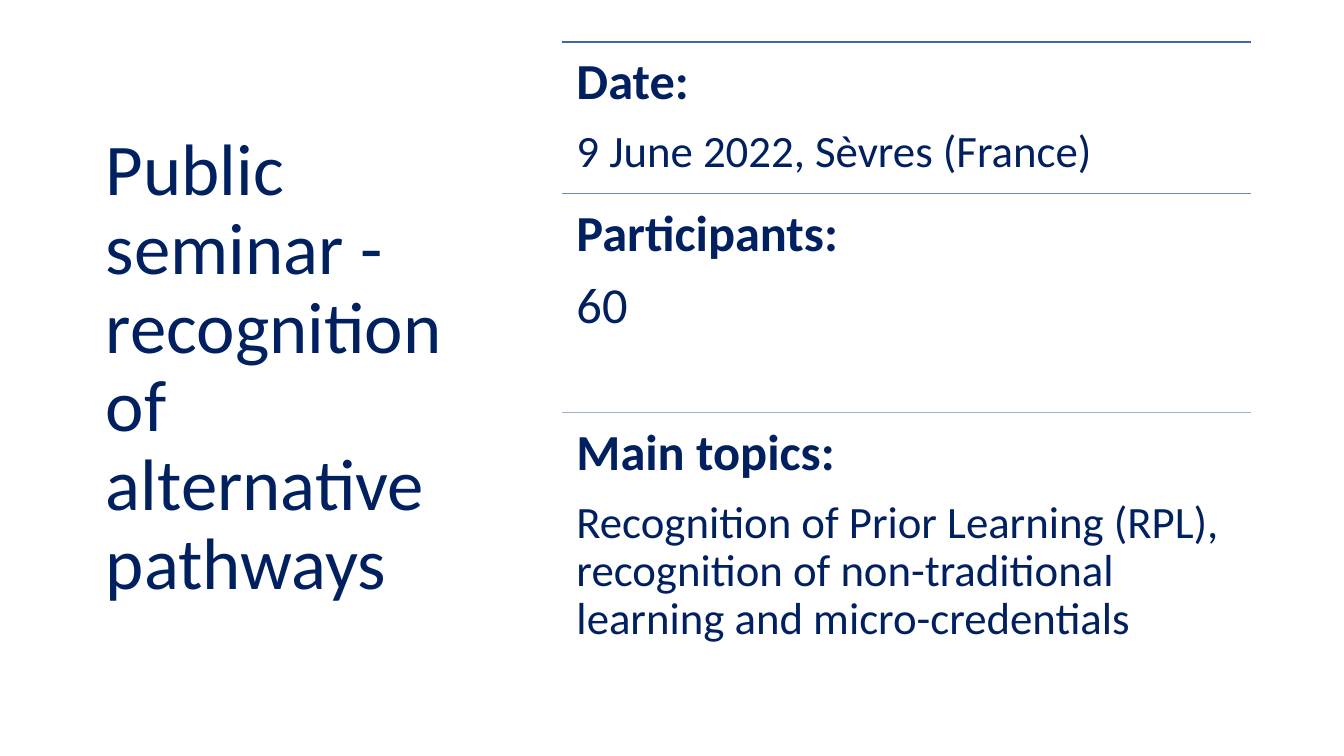
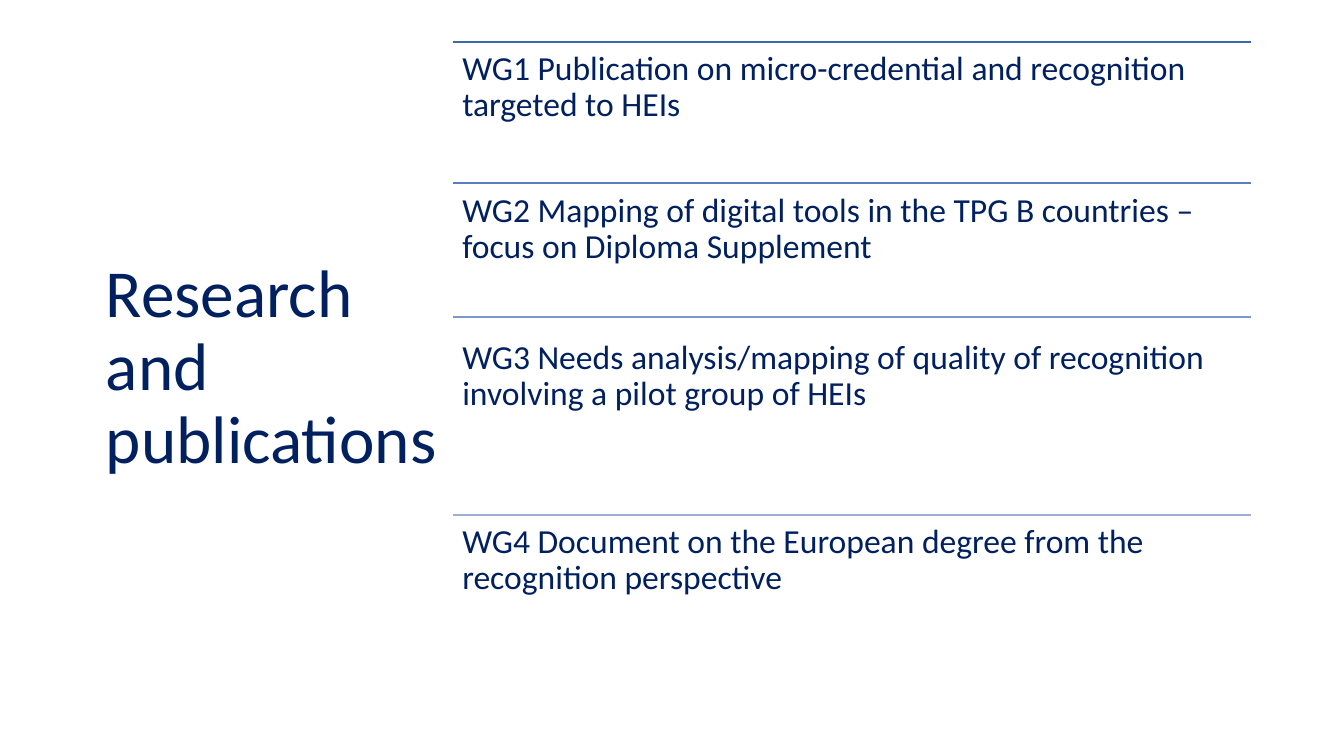
"""Build two slides, each with a title at the left and ruled text sections at the right."""
import pptx
import pptx.dml.color
import pptx.enum.shapes
import pptx.enum.text
import pptx.util
from lxml import etree

Inches = pptx.util.Inches
Pt = pptx.util.Pt
FONT = "Calibri"
NAVY = "002060"
RIGHT = 9.31
TITLE_BOX = (0.69, 0.46, 2.77, 4.57)
A_NS = "http://schemas.openxmlformats.org/drawingml/2006/main"

SEMINAR = [
    (0.31, 0.31, 1.14, "3E67B2", [("Date:", 27, True), ("9 June 2022, Sèvres (France)", 24, False)]),
    (1.44, 1.44, 1.62, "6C88C8", [("Participants:", 27, True), ("60", 27, False)]),
    (3.07, 3.07, 1.96, "9FAED8", [
        ("Main topics:", 27, True),
        ("Recognition of Prior Learning (RPL), recognition of non-traditional "
         "learning and micro-credentials", 24, False)]),
]
PUBLICATIONS = [
    (0.31, 0.31, 0.97, "3E67B2", [
        ("WG1 Publication on micro-credential and recognition targeted to HEIs", 18, False)]),
    (1.36, 1.37, 1.19, "5A7CC3", [
        ("WG2 Mapping of digital tools in the TPG B countries – focus on Diploma Supplement", 18, False)]),
    (2.36, 2.46, 1.37, "7D95CD", [
        ("WG3 Needs analysis/mapping of quality of recognition involving a pilot group of HEIs", 18, False)]),
    (3.83, 3.83, 1.19, "9FAED8", [
        ("WG4 Document on the European degree from the recognition perspective", 18, False)]),
]


def rgb(value):
    """Turn a hex string into a colour."""
    return pptx.dml.color.RGBColor.from_string(value)


def add_text(s, box, paragraphs, inset=None, space_after=None):
    """Add a wrapped text box of (text, size, bold) paragraphs and return its frame."""
    tf = s.shapes.add_textbox(*map(Inches, box)).text_frame
    tf.word_wrap = True
    if inset is not None:
        tf.margin_left = tf.margin_top = tf.margin_right = tf.margin_bottom = Inches(inset)
    for i, (text, size, bold) in enumerate(paragraphs):
        p = tf.add_paragraph() if i else tf.paragraphs[0]
        p.line_spacing = 0.9
        p.space_after = Pt(space_after or round(0.35 * size, 1))
        r = p.add_run()
        r.text = text
        r.font.name = FONT
        r.font.size = Pt(size)
        r.font.bold = bold
        r.font.color.rgb = rgb(NAVY)
    return tf


def add_title(s, box, text, size):
    """Place the title, centred vertically in its box."""
    tf = add_text(s, box, [(text, size, False)], space_after=6)
    tf.vertical_anchor = pptx.enum.text.MSO_ANCHOR.MIDDLE


def add_rule(s, left, right, y, color):
    """Draw a thin horizontal rule."""
    line = s.shapes.add_connector(
        pptx.enum.shapes.MSO_CONNECTOR.STRAIGHT,
        Inches(left), Inches(y), Inches(right), Inches(y))
    line.line.color.rgb = rgb(color)
    line.line.width = Pt(1)
    etree.SubElement(line._element.spPr, f"{{{A_NS}}}effectLst")


def add_sections(s, left, right, sections, inset):
    """Stack ruled text sections between two side edges."""
    for rule_y, top, height, color, paragraphs in sections:
        add_rule(s, left, right, rule_y, color)
        add_text(s, (left, top, right - left, height), paragraphs, inset)


def add_section_slide(prs, title, title_size, left, sections, inset):
    """Add a slide with a title and its ruled sections."""
    s = prs.slides.add_slide(prs.slide_layouts[6])
    s.background.fill.solid()
    s.background.fill.fore_color.rgb = rgb("FFFFFF")
    add_title(s, TITLE_BOX, title, title_size)
    add_sections(s, left, RIGHT, sections, inset)


def main():
    """Build and save the presentation."""
    prs = pptx.Presentation()
    prs.slide_width = Inches(10)
    prs.slide_height = Inches(10 * 9 / 16)
    add_section_slide(prs, "Public seminar - recognition of alternative pathways",
                      39, 4.18, SEMINAR, 0.11)
    add_section_slide(prs, "Research and publications", 36, 3.37, PUBLICATIONS, 0.07)
    prs.save("out.pptx")


if __name__ == "__main__":
    main()
